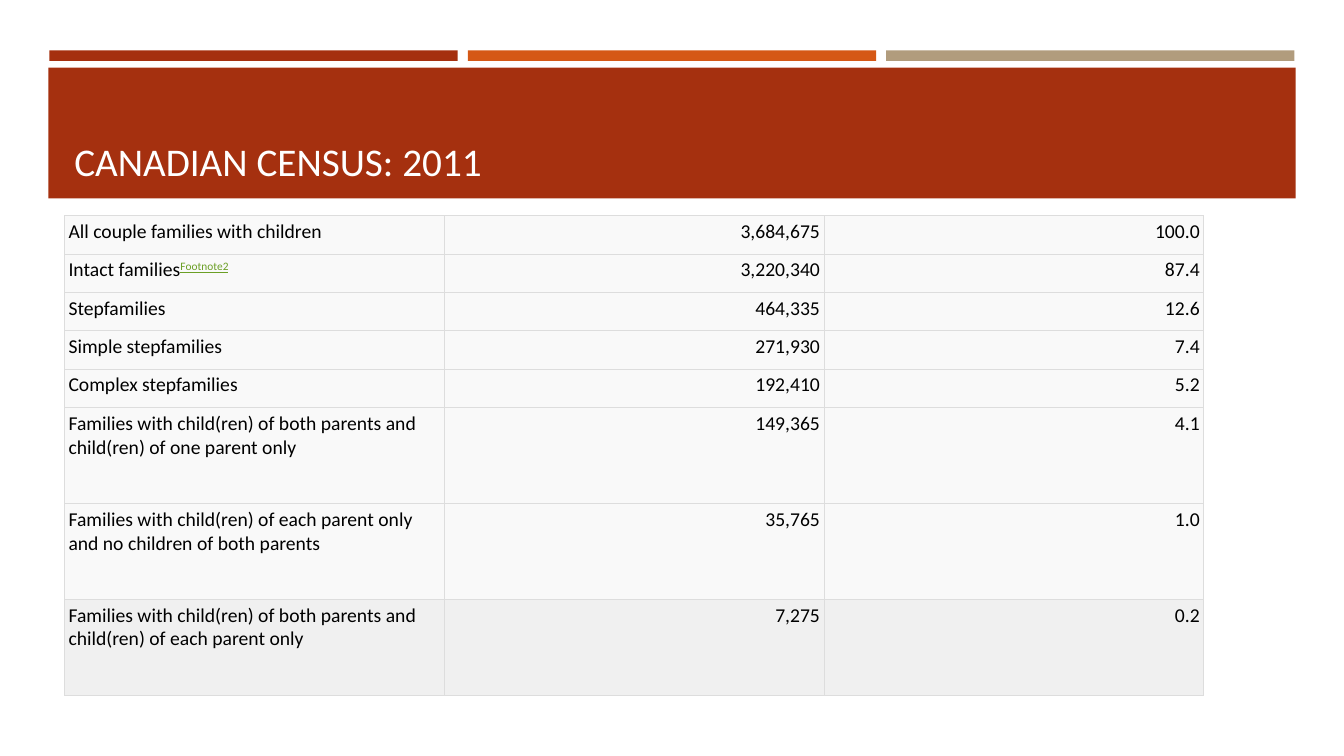
from dataclasses import dataclass

from lxml import etree
from pptx import Presentation
from pptx.dml.color import RGBColor
from pptx.enum.shapes import MSO_SHAPE
from pptx.enum.text import MSO_ANCHOR, PP_ALIGN
from pptx.oxml.ns import qn
from pptx.util import Inches, Pt

RECT = MSO_SHAPE.RECTANGLE
BOTTOM = MSO_ANCHOR.BOTTOM
LEFT, RIGHT = PP_ALIGN.LEFT, PP_ALIGN.RIGHT

WIDTH, HEIGHT = Inches(13.33), Inches(7.5)
COLORS = {
    "rust": "A5300F", "orange": "D55816", "tan": "B19C7D",
    "white": "FFFFFF", "black": "000000", "link": "6B9F25",
    "pale": "F9F9F9", "gray": "F0F0F0", "rule": "DDDDDD",
}
FONTS = {
    "title": {"name": "Calibri", "size": Pt(28)},
    "body": {"name": "Calibri", "size": Pt(14)},
    "note": {"name": "Calibri", "size": Pt(14), "underline": True},
}
INSET = Inches(0.04)
CELL = {"margin_left": INSET, "margin_right": INSET,
        "margin_top": INSET, "margin_bottom": INSET}
PLAIN = {"first_row": False, "horz_banding": False}
TALL = 2.5  # height of a two-line row, in single rows


@dataclass
class Box:
    """Place and size in percent of the slide."""
    x: float
    y: float
    w: float
    h: float

    def frame(self) -> tuple[int, int, int, int]:
        return (int(WIDTH * self.x / 100), int(HEIGHT * self.y / 100),
                int(WIDTH * self.w / 100), int(HEIGHT * self.h / 100))


@dataclass
class Family:
    label: str
    count: str
    share: str
    rows: float = 1
    note: str = ""
    fill: str = "pale"


BAR = Box(3.68, 6.67, 30.38, 1.4)
STEP = 31.13
BANNER = Box(3.6, 8.93, 92.8, 17.33)
TITLE = Box(4.8, 10.27, 90.47, 14.8)
TABLE = Box(4.8, 28.53, 84.77, 63.47)

FAMILIES = [
    Family("All couple families with children", "3,684,675", "100.0"),
    Family("Intact families", "3,220,340", "87.4", note="Footnote2"),
    Family("Stepfamilies", "464,335", "12.6"),
    Family("Simple stepfamilies", "271,930", "7.4"),
    Family("Complex stepfamilies", "192,410", "5.2"),
    Family("Families with child(ren) of both parents and child(ren) of one parent only",
           "149,365", "4.1", TALL),
    Family("Families with child(ren) of each parent only and no children of both parents",
           "35,765", "1.0", TALL),
    Family("Families with child(ren) of both parents and child(ren) of each parent only",
           "7,275", "0.2", TALL, fill="gray"),
]


def tint(name: str) -> RGBColor:
    return RGBColor.from_string(COLORS[name])


def apply(target, values: dict) -> None:
    for key, value in values.items():
        setattr(target, key, value)


def write(para, text: str, style: str, color: str):
    run = para.add_run()
    run.text = text
    apply(run.font, FONTS[style])
    run.font.color.rgb = tint(color)
    return run


def block(slide, box: Box, color: str) -> None:
    shape = slide.shapes.add_shape(RECT, *box.frame())
    shape.shadow.inherit = False
    shape.fill.solid()
    shape.fill.fore_color.rgb = tint(color)
    shape.line.fill.background()


def head(slide, text: str) -> None:
    frame = slide.shapes.add_textbox(*TITLE.frame()).text_frame
    apply(frame, {"word_wrap": True, "vertical_anchor": BOTTOM})
    write(frame.paragraphs[0], text, "title", "white")


def edge(cell) -> None:
    """Rule all four sides; must run before the cell is filled."""
    props = cell._tc.get_or_add_tcPr()
    for side in ("lnL", "lnR", "lnT", "lnB"):
        line = etree.SubElement(props, qn(f"a:{side}"), w=str(Pt(0.75)))
        fill = etree.SubElement(line, qn("a:solidFill"))
        etree.SubElement(fill, qn("a:srgbClr"), val=COLORS["rule"])


def census(slide, families: list[Family]) -> None:
    box = TABLE.frame()
    table = slide.shapes.add_table(len(families), 3, *box).table
    apply(table, PLAIN)
    unit = box[3] / sum(family.rows for family in families)
    for row, family in zip(table.rows, families):
        row.height = int(unit * family.rows)
        texts = (family.label, family.count, family.share)
        for col, (cell, text) in enumerate(zip(row.cells, texts)):
            apply(cell, CELL)
            edge(cell)
            cell.fill.solid()
            cell.fill.fore_color.rgb = tint(family.fill)
            para = cell.text_frame.paragraphs[0]
            para.alignment = RIGHT if col else LEFT
            write(para, text, "body", "black")
            if family.note and col == 0:
                note = write(para, family.note, "note", "link")
                note._r.get_or_add_rPr().set("baseline", "30000")


def main() -> None:
    deck = Presentation()
    apply(deck, {"slide_width": WIDTH, "slide_height": HEIGHT})
    slide = deck.slides.add_slide(deck.slide_layouts[6])
    for i, color in enumerate(("rust", "orange", "tan")):
        block(slide, Box(BAR.x + i * STEP, BAR.y, BAR.w, BAR.h), color)
    block(slide, BANNER, "rust")
    head(slide, "CANADIAN CENSUS: 2011")
    census(slide, FAMILIES)
    deck.save("out.pptx")


if __name__ == "__main__":
    main()
